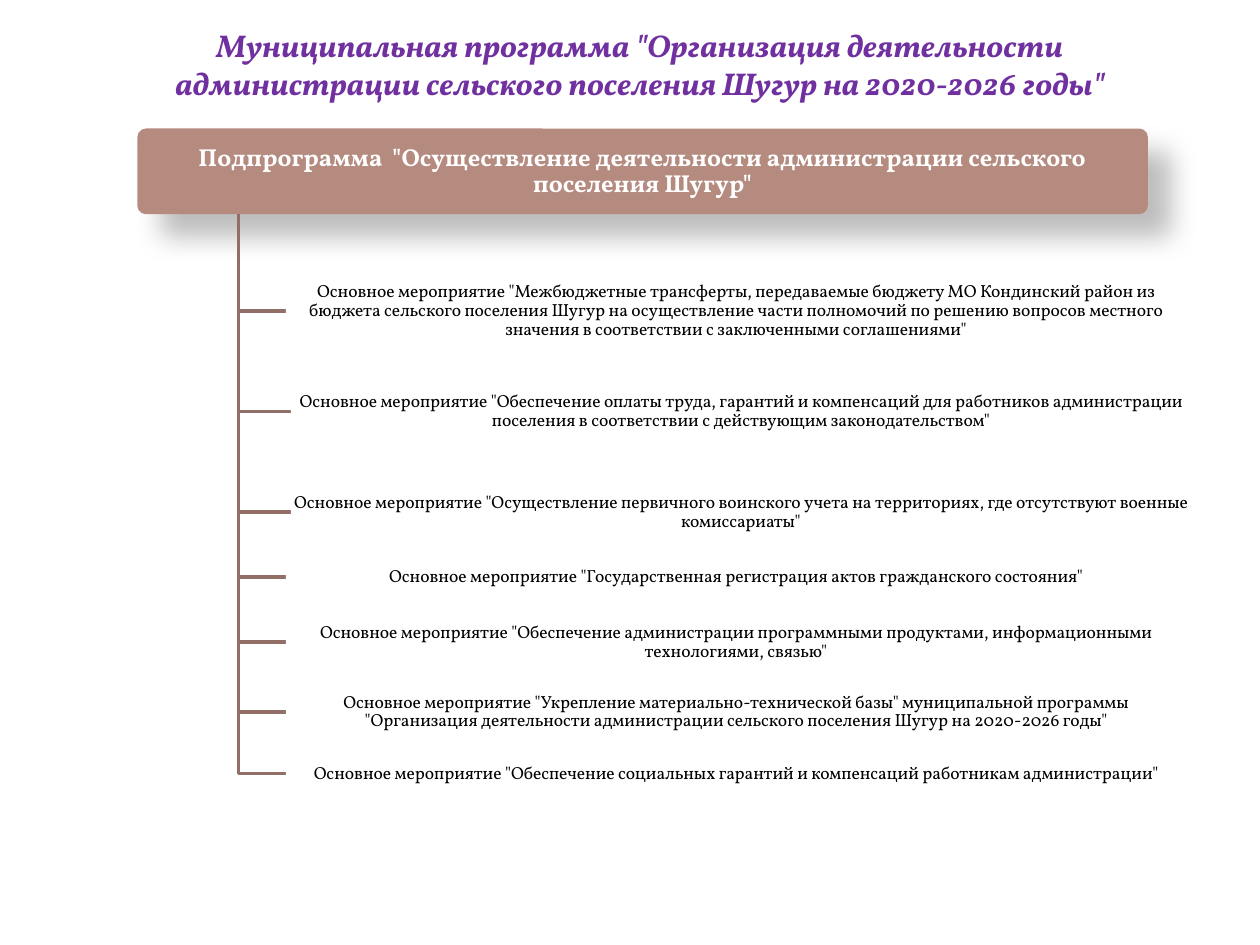
from dataclasses import dataclass

from lxml import etree
from pptx import Presentation
from pptx.dml.color import RGBColor
from pptx.enum.shapes import MSO_SHAPE
from pptx.enum.text import MSO_ANCHOR, MSO_AUTO_SIZE, PP_ALIGN
from pptx.oxml.ns import qn
from pptx.util import Inches, Pt

ROUNDED = MSO_SHAPE.ROUNDED_RECTANGLE
TOP, MIDDLE = MSO_ANCHOR.TOP, MSO_ANCHOR.MIDDLE
CENTER = PP_ALIGN.CENTER
NO_FIT = MSO_AUTO_SIZE.NONE
TITLE_ONLY = 5


@dataclass(frozen=True)
class Theme:
    font: str = "Vollkorn"
    title_color: str = "7030A0"
    header_fill: str = "B58B80"
    branch_color: str = "916F67"
    white: str = "FFFFFF"
    black: str = "000000"
    title_size: int = 18
    header_size: int = 14
    activity_size: int = 10
    branch_width: int = 2


THEME = Theme()

# Columns of the tree, in inches
HEADER = (1.09, 1.02, 8.02, 0.68)
TRUNK = HEADER[0] + HEADER[2] / 10
NEAR, FAR = 2.27, 2.31
ACTIVITY_WIDTH = 7.14

TITLE = ('Муниципальная программа "Организация деятельности '
         'администрации сельского поселения Шугур на 2020-2026 годы"')
SUBPROGRAM = ('Подпрограмма  "Осуществление деятельности администрации '
              'сельского поселения Шугур"')

# Left column, top, height, name of the activity
ACTIVITIES = [
    (NEAR, 2.11, 0.72,
     '"Межбюджетные трансферты, передаваемые бюджету МО Кондинский район из '
     'бюджета сельского поселения Шугур на осуществление части полномочий по '
     'решению вопросов местного значения в соответствии с заключенными '
     'соглашениями"'),
    (FAR, 2.94, 0.65,
     '"Обеспечение оплаты труда, гарантий и компенсаций для работников '
     'администрации поселения в соответствии с действующим законодательством"'),
    (FAR, 3.83, 0.47,
     '"Осуществление первичного воинского учета на территориях, где '
     'отсутствуют военные комиссариаты"'),
    (NEAR, 4.45, 0.26,
     '"Государственная регистрация актов гражданского состояния"'),
    (NEAR, 4.87, 0.45,
     '"Обеспечение администрации программными продуктами, информационными '
     'технологиями, связью"'),
    (NEAR, 5.47, 0.36,
     '"Укрепление материально-технической базы" муниципальной программы '
     '"Организация деятельности администрации сельского поселения Шугур на '
     '2020-2026 годы"'),
    (NEAR, 6.02, 0.24,
     '"Обеспечение социальных гарантий и компенсаций работникам администрации"'),
]


def rgb(color):
    return RGBColor.from_string(color)


def write(frame, text, size, color, bold=False, italic=False, spacing=0.9):
    """Put one centred paragraph into a text frame."""
    frame.text = text
    frame.word_wrap = True
    frame.auto_size = NO_FIT
    para = frame.paragraphs[0]
    para.alignment = CENTER
    para.line_spacing = spacing
    for span in para.runs:
        font = span.font
        font.name, font.size = THEME.font, Pt(size)
        font.bold, font.italic = bold, italic
        font.color.rgb = rgb(color)


def add_title(page):
    title = page.shapes.title
    title.left, title.top = Inches(1.25), Inches(0.16)
    title.width, title.height = Inches(7.66), Inches(0.71)
    write(title.text_frame, TITLE, THEME.title_size, THEME.title_color,
          bold=True, italic=True, spacing=1.0)
    title.text_frame.vertical_anchor = TOP


def add_box(page, place, fill, text, size, color, bold=False):
    """Add a rounded box with text in its middle and no outline."""
    box = page.shapes.add_shape(ROUNDED, *map(Inches, place))
    box.adjustments[0] = 0.1
    box.shadow.inherit = False
    box.fill.solid()
    box.fill.fore_color.rgb = rgb(fill)
    box.line.fill.background()
    frame = box.text_frame
    frame.margin_left = frame.margin_right = 0
    frame.margin_top = frame.margin_bottom = 0
    write(frame, text, size, color, bold)
    frame.vertical_anchor = MIDDLE
    return box


def set_alpha(color_element, percent):
    etree.SubElement(color_element, qn("a:alpha"), val=str(percent * 1000))


def add_soft_shadow(box):
    effects = box._element.spPr.find(qn("a:effectLst"))
    shadow = etree.SubElement(
        effects, qn("a:outerShdw"), blurRad=str(Pt(15)), dist=str(Pt(18)),
        dir=str(45 * 60000), algn="tl", rotWithShape="0")
    color = etree.SubElement(shadow, qn("a:srgbClr"), val=THEME.black)
    set_alpha(color, 26)


def add_branch(page, right, middle):
    """Draw the elbow from the header down and across to an activity."""
    bottom = HEADER[1] + HEADER[3]
    builder = page.shapes.build_freeform(Inches(TRUNK), Inches(bottom))
    builder.add_line_segments(
        [(Inches(TRUNK), Inches(middle)), (Inches(right), Inches(middle))],
        close=False)
    branch = builder.convert_to_shape()
    branch.shadow.inherit = False
    branch.fill.background()
    branch.line.color.rgb = rgb(THEME.branch_color)
    branch.line.width = Pt(THEME.branch_width)


def add_activity(page, left, top, height, name):
    add_branch(page, left, top + height / 2)
    box = add_box(page, (left, top, ACTIVITY_WIDTH, height), THEME.white,
                  f"Основное мероприятие {name}", THEME.activity_size, THEME.black)
    fill = box._element.spPr.find(qn("a:solidFill"))
    set_alpha(fill[0], 90)


def main():
    deck = Presentation()
    deck.slide_width, deck.slide_height = Inches(10), Inches(7.5)
    page = deck.slides.add_slide(deck.slide_layouts[TITLE_ONLY])

    add_title(page)

    # Root of the tree
    header = add_box(page, HEADER, THEME.header_fill, SUBPROGRAM,
                     THEME.header_size, THEME.white, bold=True)
    add_soft_shadow(header)

    # Activities hanging from the root
    for activity in ACTIVITIES:
        add_activity(page, *activity)

    deck.save("out.pptx")


if __name__ == "__main__":
    main()
